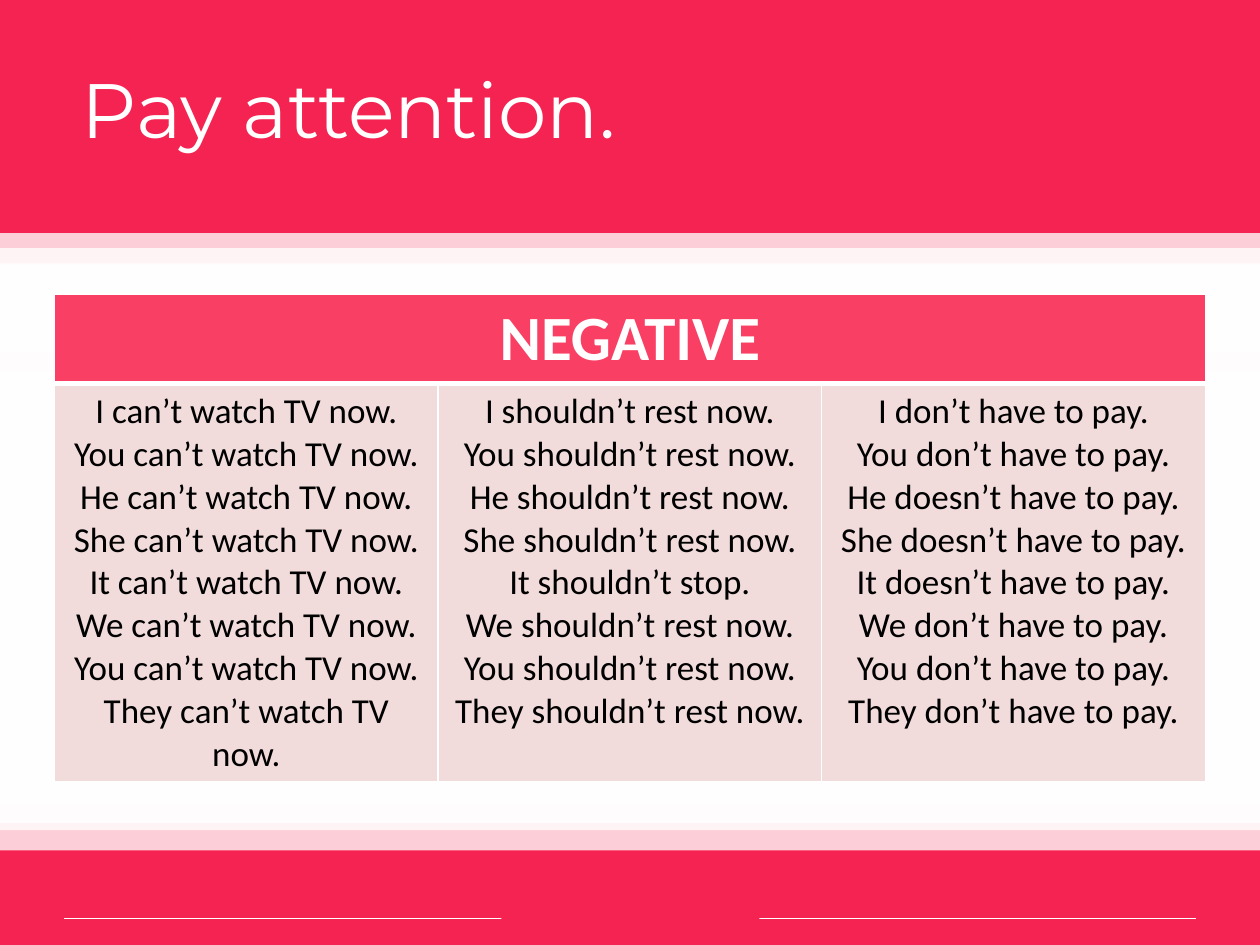
from dataclasses import dataclass

from lxml import etree
from pptx import Presentation
from pptx import util as u
from pptx.dml.color import RGBColor
from pptx.enum import shapes, text
from pptx.oxml import ns


@dataclass(frozen=True)
class Theme:
    red: str = "F52351"
    header: str = "F93F63"
    body: str = "F2DCDB"
    white: str = "FFFFFF"
    black: str = "000000"
    title_font: str = "Montserrat"
    table_font: str = "Calibri"
    title_size: int = 44
    header_size: int = 36
    body_size: int = 20


class SlideBuilder:
    def __init__(self, slide, theme):
        self.slide = slide
        self.theme = theme

    def rectangle(self, left, top, width, height, color, opacity=100):
        shape = self.slide.shapes.add_shape(
            shapes.MSO_SHAPE.RECTANGLE,
            u.Pt(left), u.Pt(top), u.Pt(width), u.Pt(height))
        shape.shadow.inherit = False
        shape.line.fill.background()
        shape.fill.solid()
        shape.fill.fore_color.rgb = RGBColor.from_string(color)
        if opacity < 100:
            color_element = shape._element.spPr.find(".//" + ns.qn("a:srgbClr"))
            etree.SubElement(color_element, ns.qn("a:alpha"), val=str(opacity * 1000))

    def line(self, left, right, y, color, width):
        connector = self.slide.shapes.add_connector(
            shapes.MSO_CONNECTOR.STRAIGHT, u.Pt(left), u.Pt(y), u.Pt(right), u.Pt(y))
        connector.line.color.rgb = RGBColor.from_string(color)
        connector.line.width = u.Pt(width)
        etree.SubElement(connector._element.spPr, ns.qn("a:effectLst"))

    def run(self, paragraph, words, font, size, color, bold=False):
        run = paragraph.add_run()
        run.text = words
        run.font.name = font
        run.font.size = u.Pt(size)
        run.font.bold = bold
        run.font.color.rgb = RGBColor.from_string(color)

    def title(self, words, left, top, width, height):
        shape = self.slide.shapes.title
        shape.left, shape.top = u.Pt(left), u.Pt(top)
        shape.width, shape.height = u.Pt(width), u.Pt(height)
        frame = shape.text_frame
        frame.word_wrap = True
        frame.auto_size = text.MSO_AUTO_SIZE.NONE
        frame.vertical_anchor = text.MSO_ANCHOR.TOP
        paragraph = frame.paragraphs[0]
        paragraph.alignment = text.PP_ALIGN.LEFT
        self.run(paragraph, words, self.theme.title_font,
                 self.theme.title_size, self.theme.white)
        # Bring the title in front of the background
        self.slide.shapes._spTree.append(shape._element)

    def cell(self, cell, lines, fill, size, color, bold=False, top=1, bottom=1):
        cell.fill.solid()
        cell.fill.fore_color.rgb = RGBColor.from_string(fill)
        self.borders(cell, {"lnL": 1, "lnR": 1, "lnT": top, "lnB": bottom})
        for index, words in enumerate(lines):
            frame = cell.text_frame
            paragraph = frame.add_paragraph() if index else frame.paragraphs[0]
            paragraph.alignment = text.PP_ALIGN.CENTER
            self.run(paragraph, words, self.theme.table_font, size, color, bold)

    def borders(self, cell, widths):
        properties = cell._tc.get_or_add_tcPr()
        for index, (side, width) in enumerate(widths.items()):
            border = etree.Element(ns.qn("a:" + side), w=str(u.Pt(width)))
            fill = etree.SubElement(border, ns.qn("a:solidFill"))
            etree.SubElement(fill, ns.qn("a:srgbClr"), val=self.theme.white)
            properties.insert(index, border)

    def table(self, heading, columns, left, top, width, row_heights):
        theme = self.theme
        table = self.slide.shapes.add_table(
            len(row_heights), len(columns), u.Pt(left), u.Pt(top),
            u.Pt(width), u.Pt(sum(row_heights))).table
        for row, height in zip(table.rows, row_heights):
            row.height = u.Pt(height)
        table.cell(0, 0).merge(table.cell(0, len(columns) - 1))
        for index, lines in enumerate(columns):
            self.cell(table.cell(0, index), [] if index else [heading], theme.header,
                      theme.header_size, theme.white, bold=True, bottom=3)
            self.cell(table.cell(1, index), lines, theme.body,
                      theme.body_size, theme.black, top=3)


WIDTH, HEIGHT = 720, 540
FOOTER_TOP = 502.5

# Top and height of the overlapping translucent bands
BANDS = [(150.5, 51), (141.8, 51), (133.2, 36.7), (212.4, 257.8), (151.2, 294.5),
         (182.2, 243.4), (419.8, 66.2), (408.2, 66.2), (158.4, 301)]

SUBJECTS = ["I", "You", "He", "She", "It", "We", "You", "They"]
THIRD_PERSON = {"He", "She", "It"}


def negative_columns():
    cannot = [f"{subject} can’t watch TV now." for subject in SUBJECTS]
    should_not = [f"{subject} shouldn’t {'stop' if subject == 'It' else 'rest now'}."
                  for subject in SUBJECTS]
    need_not = [f"{subject} {'doesn’t' if subject in THIRD_PERSON else 'don’t'} have to pay."
                for subject in SUBJECTS]
    return [cannot, should_not, need_not]


def main():
    presentation = Presentation()
    presentation.slide_width, presentation.slide_height = u.Pt(WIDTH), u.Pt(HEIGHT)
    theme = Theme()
    slide = presentation.slides.add_slide(presentation.slide_layouts[5])
    builder = SlideBuilder(slide, theme)

    # Red background and footer, with a rule broken in the middle
    builder.rectangle(0, 0, WIDTH, HEIGHT, theme.red)
    builder.rectangle(0, FOOTER_TOP, WIDTH, HEIGHT - FOOTER_TOP, theme.red)
    builder.line(36.7, 683.3, 525, theme.white, 0.25)
    builder.rectangle(286.5, FOOTER_TOP, 147.5, HEIGHT - FOOTER_TOP, theme.red)

    # White content area
    for top, height in BANDS:
        builder.rectangle(0, top, WIDTH, height, theme.white, opacity=78)

    # Table and title
    builder.table("NEGATIVE", negative_columns(), 31.2, 168, 657.6, [46, 226])
    builder.title("Pay attention.", 39.6, 31.7, 640.8, 102.2)

    presentation.save("out.pptx")


if __name__ == "__main__":
    main()
